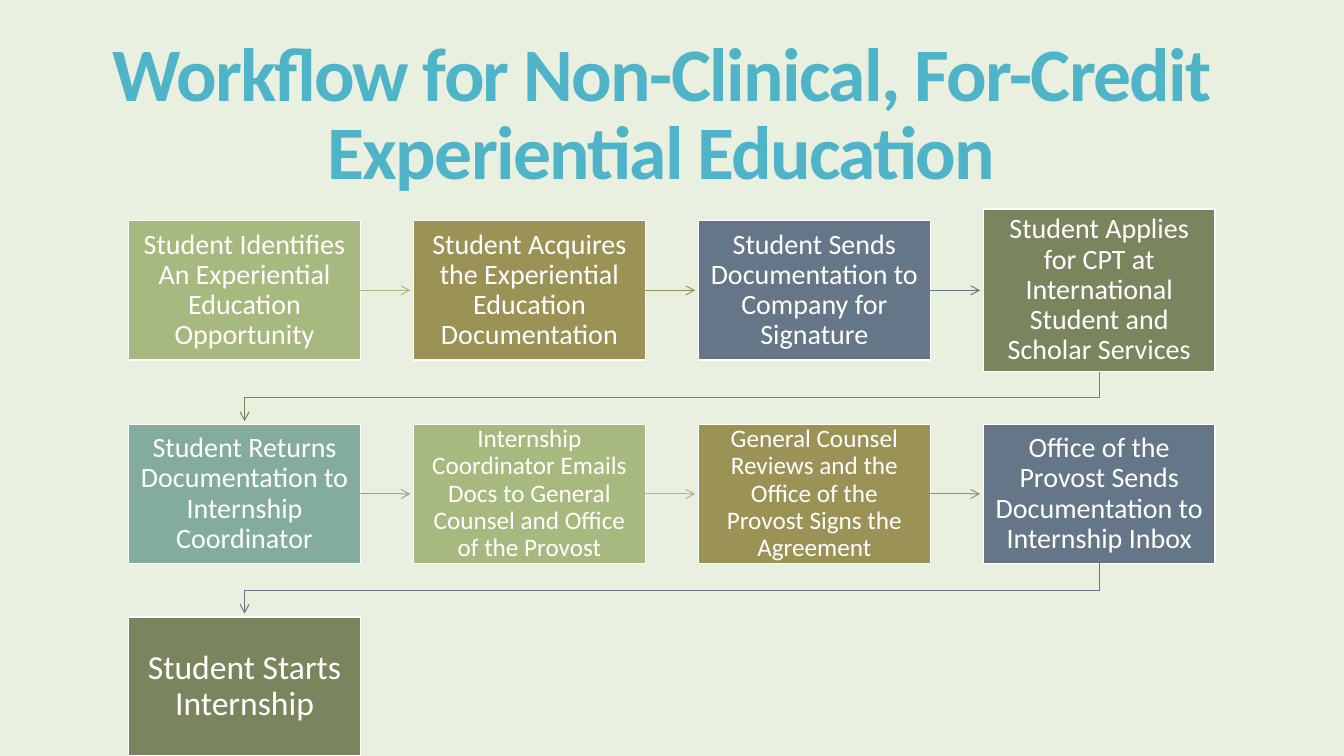
"""Build the experiential education workflow slide."""
from dataclasses import dataclass

from lxml.etree import SubElement
from pptx import Presentation
from pptx.dml.color import RGBColor as RGB
from pptx.enum.shapes import MSO_CONNECTOR as CONN, MSO_SHAPE as SHAPE
from pptx.enum.text import MSO_ANCHOR as ANCHOR, MSO_AUTO_SIZE as AUTO, PP_ALIGN as ALIGN
from pptx.oxml.ns import qn
from pptx.shapes.autoshape import Shape
from pptx.slide import Slide
from pptx.util import Pt


@dataclass(frozen=True)
class Theme:
    """Colours, font and type sizes."""
    font: str = "Calibri"
    background: str = "EAF0E0"
    title: str = "50B4C8"
    text: str = "FFFFFF"
    steps: tuple[str, ...] = ("A8B97F", "9B9256", "657689", "7A855D", "84AC9D")
    title_size: float = 54
    large: float = 24
    body: float = 20
    small: float = 18


@dataclass(frozen=True)
class Step:
    """One box of the workflow."""
    text: str
    size: float
    height: float = 99.4


THEME = Theme()
COLUMNS = 4
LEFT, PITCH, WIDTH = 91.9, 203.5, 165.6
ROW_MIDDLES = (207.4, 352.8, 490.3)
ARROW_GAP = 2.3

STEPS = (
    Step("Student Identifies An Experiential Education Opportunity", THEME.body),
    Step("Student Acquires the Experiential Education Documentation", THEME.body),
    Step("Student Sends Documentation to Company for Signature", THEME.body),
    Step("Student Applies for CPT at International Student and Scholar Services", THEME.body, 116),
    Step("Student Returns Documentation to Internship Coordinator", THEME.body),
    Step("Internship Coordinator Emails Docs to General Counsel and Office of the Provost", THEME.small),
    Step("General Counsel Reviews and the Office of the Provost Signs the Agreement", THEME.small),
    Step("Office of the Provost Sends Documentation to Internship Inbox", THEME.body),
    Step("Student Starts Internship", THEME.large),
)


def write(s: Shape, text: str, size: float, color: str, spacing: float, bold: bool = False) -> None:
    """Write one centred paragraph into a shape."""
    tf = s.text_frame
    tf.word_wrap, tf.auto_size, tf.vertical_anchor = True, AUTO.NONE, ANCHOR.MIDDLE
    p = tf.paragraphs[0]
    p.alignment, p.line_spacing = ALIGN.CENTER, spacing
    r = p.add_run()
    r.text = text
    r.font.name, r.font.size, r.font.bold = THEME.font, Pt(size), bold
    r.font.color.rgb = RGB.from_string(color)


def add_title(s: Slide) -> None:
    """Place and format the title placeholder."""
    sp = s.shapes.title
    sp.left, sp.top, sp.width, sp.height = Pt(48.2), Pt(18.7), Pt(848.2), Pt(130.3)
    write(sp, "Workflow for Non-Clinical, For-Credit Experiential Education",
          THEME.title_size, THEME.title, 0.85, True)
    sp.text_frame.paragraphs[0].runs[0].font._element.set("spc", "-120")


def add_step(s: Slide, index: int, step: Step) -> Shape:
    """Draw a step at its place in the grid."""
    row, column = divmod(index, COLUMNS)
    sp = s.shapes.add_shape(SHAPE.RECTANGLE, Pt(LEFT + column * PITCH),
                            Pt(ROW_MIDDLES[row] - step.height / 2), Pt(WIDTH), Pt(step.height))
    sp.shadow.inherit = False
    sp.fill.solid()
    sp.fill.fore_color.rgb = RGB.from_string(step_color(index))
    sp.line.color.rgb = RGB.from_string(THEME.text)
    sp.line.width = Pt(1)
    tf = sp.text_frame
    tf.margin_left = tf.margin_right = Pt(8.1)
    tf.margin_top = tf.margin_bottom = Pt(8.5)
    write(sp, step.text, step.size, THEME.text, 0.9)
    return sp


def step_color(index: int) -> str:
    """Return the colour that a step shares with its outgoing arrow."""
    return THEME.steps[index % len(THEME.steps)]


def add_arrow(s: Slide, start: Shape, end: Shape, color: str) -> None:
    """Lead from one step to the next, bending where a new row begins."""
    if end.left > start.left:
        y = start.top + start.height // 2
        sp = s.shapes.add_connector(CONN.STRAIGHT, start.left + start.width, y,
                                    end.left - Pt(ARROW_GAP), y)
        sp.begin_connect(start, 3)
    else:
        x1, x2 = (box.left + box.width // 2 for box in (start, end))
        bottom = start.top + start.height
        bend = (bottom + end.top) // 2
        path = s.shapes.build_freeform(x1, bottom)
        path.add_line_segments([(x1, bend), (x2, bend), (x2, end.top - Pt(ARROW_GAP))], close=False)
        sp = path.convert_to_shape()
        sp.fill.background()
    sp.line.color.rgb = RGB.from_string(color)
    sp.line.width = Pt(0.75)
    properties = sp._element.spPr
    SubElement(properties.find(qn("a:ln")), qn("a:tailEnd"), type="arrow")
    SubElement(properties, qn("a:effectLst"))


def main() -> None:
    """Build and save the slide."""
    prs = Presentation()
    prs.slide_width, prs.slide_height = Pt(960), Pt(540)
    s = prs.slides.add_slide(prs.slide_layouts[5])
    s.background.fill.solid()
    s.background.fill.fore_color.rgb = RGB.from_string(THEME.background)
    add_title(s)
    boxes = [add_step(s, i, step) for i, step in enumerate(STEPS)]
    for i, (start, end) in enumerate(zip(boxes, boxes[1:])):
        add_arrow(s, start, end, step_color(i))
    prs.save("out.pptx")


if __name__ == "__main__":
    main()
